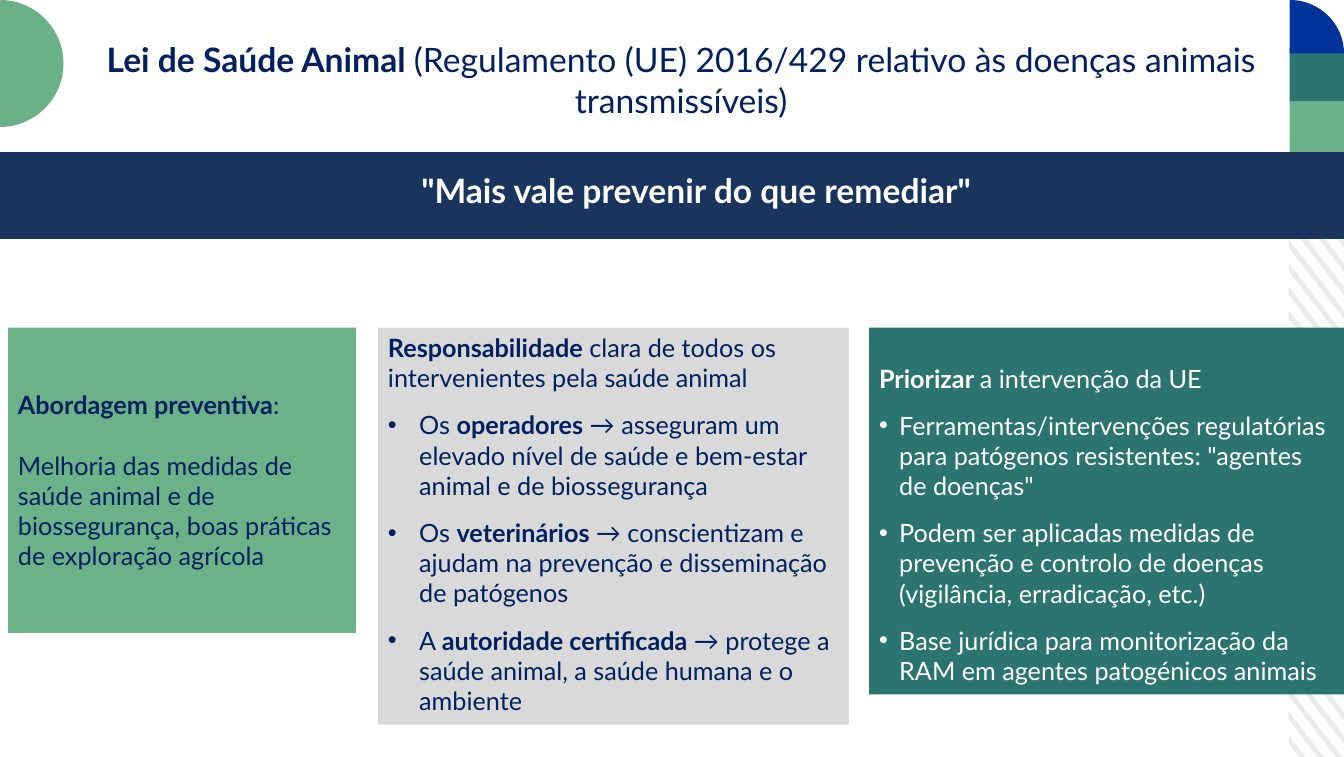
from math import cos, pi, sin

from lxml.etree import SubElement
from pptx import Presentation
from pptx.dml.color import RGBColor
from pptx.enum.shapes import MSO_SHAPE
from pptx.enum.text import MSO_ANCHOR, MSO_AUTO_SIZE, PP_ALIGN
from pptx.oxml.ns import qn
from pptx.util import Inches, Pt

# Content: ** switches bold on and off
TITLE = ("**Lei de Saúde Animal **(Regulamento (UE) 2016/429 relativo às "
         "doenças animais transmissíveis)")
MOTTO = '**"Mais vale prevenir do que remediar"**'
PANELS = [
    {"left": 0.08, "width": 3.45, "height": 3.03, "fill": "sage", "ink": "navy",
     "anchor": MSO_ANCHOR.MIDDLE, "inset": 0.05, "gap": 21.6, "indent": 0,
     "lead": "**Abordagem preventiva**:",
     "points": ["Melhoria das medidas de saúde animal e de biossegurança, "
                "boas práticas de exploração agrícola"]},
    {"left": 3.75, "width": 4.67, "height": 3.94, "fill": "grey", "ink": "navy",
     "anchor": MSO_ANCHOR.TOP, "inset": 0.05, "gap": 12, "indent": 0.31,
     "lead": "**Responsabilidade** clara de todos os intervenientes pela saúde animal",
     "points": ["Os **operadores** → asseguram um elevado nível de saúde e "
                "bem-estar animal e de biossegurança",
                "Os **veterinários **→ conscientizam e ajudam na prevenção e "
                "disseminação de patógenos",
                "A **autoridade certificada **→ protege a saúde animal, a saúde "
                "humana e o ambiente"]},
    {"left": 8.62, "width": 4.71, "height": 3.64, "fill": "teal", "ink": "white",
     "anchor": MSO_ANCHOR.TOP, "inset": 0.35, "gap": 12, "indent": 0.2,
     "lead": "**Priorizar **a intervenção da UE",
     "points": ['Ferramentas/intervenções regulatórias para patógenos '
                'resistentes: "agentes de doenças"',
                "Podem ser aplicadas medidas de prevenção e controlo de doenças "
                "(vigilância, erradicação, etc.)",
                "Base jurídica para monitorização da RAM em agentes patogénicos "
                "animais"]},
]
COLORS = {"navy": "002060", "banner": "19355D", "blue": "003399", "teal": "2C7470",
          "green": "6BB188", "sage": "6BB289", "grey": "D9D9D9",
          "stripe": "ECEBEB", "white": "FFFFFF"}
WIDTH, HEIGHT = 13.33, 7.51
PANEL_TOP = 3.25

# Corner blocks and stripes
EDGE_LEFT, EDGE_WIDTH = 12.79, 0.54
STRIPE_LEFT, STRIPE_TOP = 12.78, 1.54
STRIPE_RISE, STRIPE_THICK, STRIPE_PITCH = 0.71, 0.08, 0.2343


def color(name):
    return RGBColor.from_string(COLORS[name])


def paint(shape, fill):
    shape.fill.solid()
    shape.fill.fore_color.rgb = color(fill)
    shape.line.fill.background()
    shape.shadow.inherit = False
    return shape


def add_block(kind, left, top, width, height, fill):
    return paint(slide.shapes.add_shape(kind, Inches(left), Inches(top),
                                        Inches(width), Inches(height)), fill)


def add_outline(contours, fill):
    emu = [[(Inches(x), Inches(y)) for x, y in contour] for contour in contours]
    builder = slide.shapes.build_freeform(*emu[0][0], scale=1.0)
    for number, contour in enumerate(emu):
        if number:
            builder.move_to(*contour[0])
        builder.add_line_segments(contour[1:], close=True)
    return paint(builder.convert_to_shape(), fill)


def write(paragraph, text, size, ink, align=PP_ALIGN.LEFT):
    paragraph.alignment = align
    for number, part in enumerate(text.split("**")):
        if part:
            run = paragraph.add_run()
            run.text = part
            run.font.name, run.font.size = "Lato", Pt(size)
            run.font.bold = number % 2 == 1
            run.font.color.rgb = color(ink)


def add_bullet(paragraph, indent):
    properties = paragraph._p.get_or_add_pPr()
    properties.set("marL", str(Inches(indent)))
    properties.set("indent", str(-Inches(indent)))
    SubElement(properties, qn("a:buFont")).set("typeface", "Arial")
    SubElement(properties, qn("a:buChar")).set("char", "•")


def clip(contour, limit, sign):
    """Keep the part of a contour where sign * (y - limit) >= 0."""
    kept = []
    for (x1, y1), (x2, y2) in zip(contour, contour[1:] + contour[:1]):
        inside, next_inside = sign * (y1 - limit) >= 0, sign * (y2 - limit) >= 0
        if inside:
            kept.append((x1, y1))
        if inside != next_inside:
            kept.append((x1 + (x2 - x1) * (limit - y1) / (y2 - y1), limit))
    return kept


prs = Presentation()
prs.slide_width, prs.slide_height = Inches(WIDTH), Inches(HEIGHT)
slide = prs.slides.add_slide(prs.slide_layouts[5])

# Diagonal stripes along the right edge
stripes = []
for number in range(-3, 25):
    y = 1.67 + number * STRIPE_PITCH
    band = [(STRIPE_LEFT, y), (WIDTH, y + STRIPE_RISE),
            (WIDTH, y + STRIPE_RISE + STRIPE_THICK), (STRIPE_LEFT, y + STRIPE_THICK)]
    stripes.append(clip(clip(band, STRIPE_TOP, 1), HEIGHT, -1))
add_outline(stripes, "stripe")

# Corner decorations
for top, fill in [(0.48, "teal"), (1.01, "green")]:
    add_block(MSO_SHAPE.RECTANGLE, EDGE_LEFT, top, EDGE_WIDTH, 0.53, fill)
arc = [(EDGE_LEFT + EDGE_WIDTH * sin(step * pi / 48),
        0.53 - 0.53 * cos(step * pi / 48)) for step in range(25)]
add_outline([[(EDGE_LEFT, 0.53)] + arc], "blue")
half_circle = [(0.63 * sin(step * pi / 48), 0.63 - 0.63 * cos(step * pi / 48))
               for step in range(49)]
add_outline([half_circle], "green")

# Title
title = slide.shapes.title
title.left, title.top = Inches(0.67), Inches(0.34)
title.width, title.height = Inches(12.17), Inches(0.58)
title.text_frame.auto_size = MSO_AUTO_SIZE.NONE
title.text_frame.vertical_anchor = MSO_ANCHOR.TOP
title.text_frame.paragraphs[0].line_spacing = 1.0
write(title.text_frame.paragraphs[0], TITLE, 24, "navy", PP_ALIGN.CENTER)

# Motto banner
add_block(MSO_SHAPE.RECTANGLE, 0, 1.51, WIDTH, 0.86, "banner")
motto = slide.shapes.add_textbox(Inches(0.65), Inches(1.64), Inches(12.51), Inches(0.5))
motto.text_frame.word_wrap = True
write(motto.text_frame.paragraphs[0], MOTTO, 24, "white", PP_ALIGN.CENTER)

# Three panels
for panel in PANELS:
    box = add_block(MSO_SHAPE.RECTANGLE, panel["left"], PANEL_TOP, panel["width"],
                    panel["height"], panel["fill"])
    frame = box.text_frame
    frame.word_wrap = True
    frame.vertical_anchor = panel["anchor"]
    frame.margin_top = Inches(panel["inset"])
    write(frame.paragraphs[0], panel["lead"], 18, panel["ink"])
    for point in panel["points"]:
        paragraph = frame.add_paragraph()
        paragraph.space_before = Pt(panel["gap"])
        if panel["indent"]:
            add_bullet(paragraph, panel["indent"])
        write(paragraph, point, 18, panel["ink"])

prs.save("out.pptx")
